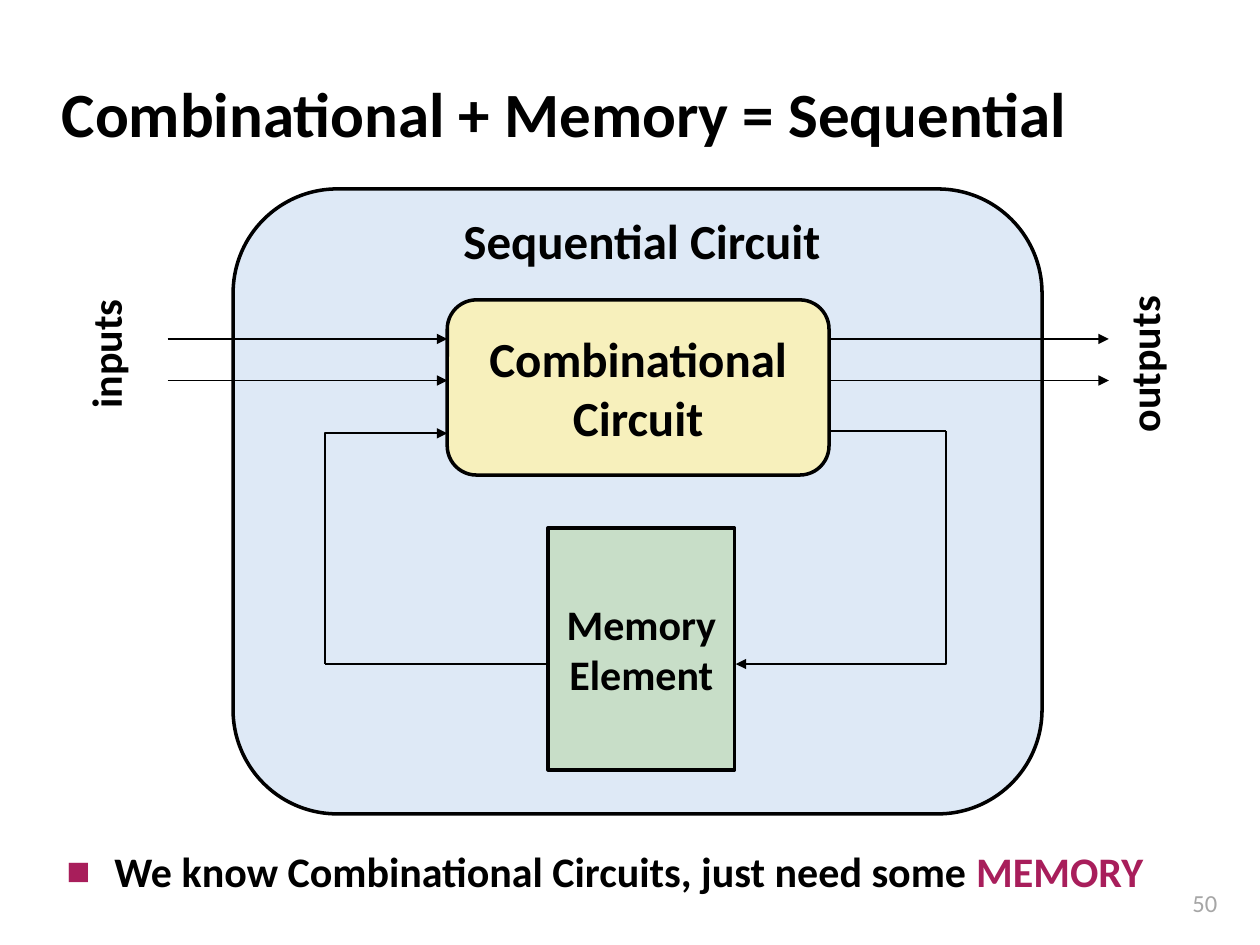
from pptx import Presentation
from pptx.dml.color import RGBColor
from pptx.enum.shapes import MSO_CONNECTOR, MSO_SHAPE
from pptx.enum.text import MSO_ANCHOR, PP_ALIGN
from pptx.oxml.ns import qn
from pptx.util import Inches, Pt
from lxml.etree import SubElement

theme = {
    "font": "Calibri",
    "ink": RGBColor(0x00, 0x00, 0x00),
    "grey": RGBColor(0xA6, 0xA6, 0xA6),
    "accent": RGBColor(0xA8, 0x1E, 0x5B),
    "blue": RGBColor(0xDE, 0xE9, 0xF6),
    "yellow": RGBColor(0xF7, 0xF0, 0xBC),
    "green": RGBColor(0xC8, 0xDE, 0xC8),
    "title": Pt(36), "large": Pt(28), "text": Pt(24), "small": Pt(14),
    "border": Pt(2), "wire": Pt(1),
}


def write(frame, lines, size, align=PP_ALIGN.CENTER, color="ink", bold=True):
    """Fill a text frame, one paragraph for each line."""
    for i, line in enumerate(lines):
        para = frame.paragraphs[0] if i == 0 else frame.add_paragraph()
        para.alignment = align
        run = para.add_run()
        run.text = line
        form = {"name": theme["font"], "size": theme[size], "bold": bold}
        for key, value in form.items():
            setattr(run.font, key, value)
        run.font.color.rgb = theme[color]


def wire(kind, start, end, arrow):
    """Draw a thin black connector, with an arrowhead if asked."""
    link = shapes.add_connector(kind, *map(Inches, start + end))
    link.line.color.rgb = theme["ink"]
    link.line.width = theme["wire"]
    if arrow:
        SubElement(link.line._get_or_add_ln(), qn("a:tailEnd"), type="triangle")
    SubElement(link._element.spPr, qn("a:effectLst"))
    return link


deck = Presentation()
deck.slide_width, deck.slide_height = Inches(10), Inches(7.5)
slide = deck.slides.add_slide(deck.slide_layouts[5])
shapes = slide.shapes

# Title
title = shapes.title
place = {"left": 0.39, "top": 0.48, "width": 8.3, "height": 0.83}
for key, value in place.items():
    setattr(title, key, Inches(value))
title.text_frame.vertical_anchor = MSO_ANCHOR.MIDDLE
write(title.text_frame, ["Combinational + Memory = Sequential"], "title", PP_ALIGN.LEFT)

# Blocks: the whole circuit and the two parts inside it
blocks = [
    (MSO_SHAPE.ROUNDED_RECTANGLE, (1.85, 1.5, 6.42, 4.96), "blue", [], "large"),
    (MSO_SHAPE.ROUNDED_RECTANGLE, (3.55, 2.38, 3.03, 1.39), "yellow",
     ["Combinational", "Circuit"], "large"),
    (MSO_SHAPE.RECTANGLE, (4.35, 4.19, 1.48, 1.92), "green",
     ["Memory", "Element"], "text"),
]
for kind, box, fill, lines, size in blocks:
    block = shapes.add_shape(kind, *map(Inches, box))
    block.shadow.inherit = False
    block.fill.solid()
    block.fill.fore_color.rgb = theme[fill]
    block.line.color.rgb = theme["ink"]
    block.line.width = theme["border"]
    block.text_frame.word_wrap = False
    block.text_frame.vertical_anchor = MSO_ANCHOR.MIDDLE
    write(block.text_frame, lines, size)

# Labels and slide number
labels = [
    ("Sequential Circuit", (2.66, 1.62, 4.87, 0.88), 0, "large", {}),
    ("inputs", (0.21, 2.56, 1.25, 0.5), 270, "text", {}),
    ("outputs", (8.37, 2.64, 1.41, 0.5), 270, "text", {}),
    ("50", (9, 7, 0.76, 0.34), 0, "small",
     {"align": PP_ALIGN.RIGHT, "color": "grey", "bold": False}),
]
for text, box, turn, size, form in labels:
    label = shapes.add_textbox(*map(Inches, box))
    label.rotation = turn
    label.text_frame.word_wrap = True
    write(label.text_frame, [text], size, **form)

# Input and output arrows
for x in (1.33, 6.58):
    for y in (2.69, 3.02):
        wire(MSO_CONNECTOR.STRAIGHT, (x, y), (x + 2.22, y), True)

# Feedback loop: plain leads, then elbows that run down or up first
wire(MSO_CONNECTOR.STRAIGHT, (6.58, 3.42), (7.51, 3.42), False)
wire(MSO_CONNECTOR.STRAIGHT, (2.58, 5.27), (4.35, 5.27), False)
for x1, y1, x2, y2 in [(7.51, 3.42, 5.84, 5.27), (2.58, 5.27, 3.55, 3.44)]:
    # Ends are placed a quarter turn back, since the elbow is turned by 90°
    midx, midy = (x1 + x2) / 2, (y1 + y2) / 2
    dx, dy = (x2 - x1) / 2, (y2 - y1) / 2
    elbow = wire(MSO_CONNECTOR.ELBOW, (midx - dy, midy + dx),
                 (midx + dy, midy - dx), True)
    props = elbow._element.spPr
    props.find(qn("a:xfrm")).set("rot", "5400000")
    props.find(qn("a:prstGeom")).set("prst", "bentConnector2")

# Closing bullet
note = shapes.add_textbox(*map(Inches, (0.43, 6.66, 8.82, 0.68))).text_frame
note.word_wrap = True
write(note, ["We know Combinational Circuits, just need some "], "text", PP_ALIGN.LEFT)
para = note.paragraphs[0]
word = para.add_run()
word.text = "MEMORY"
form = {"name": theme["font"], "size": theme["text"], "bold": True}
for key, value in form.items():
    setattr(word.font, key, value)
word.font.color.rgb = theme["accent"]
props = para._p.get_or_add_pPr()
props.set("marL", str(Inches(0.38)))
props.set("indent", str(-Inches(0.38)))
tint = SubElement(props, qn("a:buClr"))
SubElement(tint, qn("a:srgbClr"), val=str(theme["accent"]))
SubElement(props, qn("a:buSzPct"), val="60000")
SubElement(props, qn("a:buFont"), typeface=theme["font"])
SubElement(props, qn("a:buChar"), char="■")

deck.save("out.pptx")
